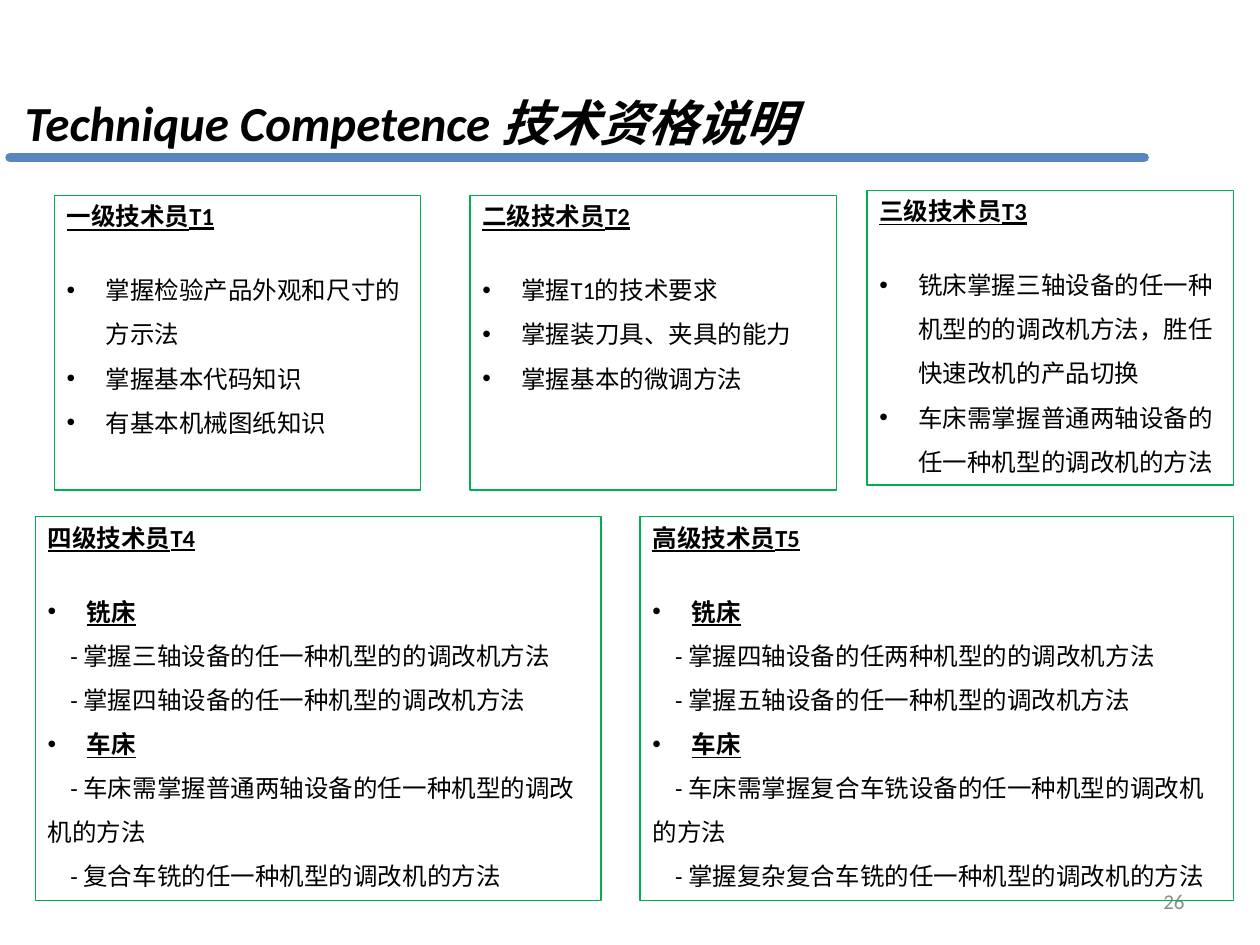
from dataclasses import dataclass

from lxml import etree
from pptx import Presentation
from pptx.dml.color import RGBColor
from pptx.enum.shapes import MSO_CONNECTOR, MSO_SHAPE
from pptx.enum.text import MSO_ANCHOR, MSO_AUTO_SIZE, PP_ALIGN
from pptx.oxml.ns import qn
from pptx.util import Inches, Pt

RECT = MSO_SHAPE.RECTANGLE
STRAIGHT = MSO_CONNECTOR.STRAIGHT
TOP, MIDDLE, BOTTOM = MSO_ANCHOR.TOP, MSO_ANCHOR.MIDDLE, MSO_ANCHOR.BOTTOM
LEFT, RIGHT = PP_ALIGN.LEFT, PP_ALIGN.RIGHT
GROW = MSO_AUTO_SIZE.SHAPE_TO_FIT_TEXT

FONT = "Calibri"
COLORS = {"text": "000000", "rule": "5887C0", "frame": "00B050", "page": "8C8C8C"}
HANG = 0.31  # bullet hanging indent
DASH = 0.18  # first-line indent of dash items


@dataclass
class Item:
    text: str
    kind: str = "bullet"  # bullet, group or dash


@dataclass
class Card:
    head: str
    left: float
    top: float
    width: float
    height: float
    items: list[Item]


def color(name: str) -> RGBColor:
    return RGBColor.from_string(COLORS[name])


def add_run(para, text: str, size: float, tone: str = "text", bold: bool = False,
            italic: bool = False, under: bool = False) -> None:
    run = para.add_run()
    run.text = text
    font = run.font
    font.name, font.size = FONT, Pt(size)
    font.bold, font.italic, font.underline = bold, italic, under
    font.color.rgb = color(tone)


def indent(para, left: float, first: float) -> None:
    props = para._p.get_or_add_pPr()
    props.set("marL", str(Inches(left)))
    props.set("indent", str(Inches(first)))


def add_bullet(para) -> None:
    props = para._p.get_or_add_pPr()
    etree.SubElement(props, qn("a:buFont")).set("typeface", "Arial")
    etree.SubElement(props, qn("a:buChar")).set("char", "•")


def add_label(slide, left: float, top: float, width: float, height: float, anchor):
    box = slide.shapes.add_textbox(Inches(left), Inches(top), Inches(width), Inches(height))
    frame = box.text_frame
    frame.word_wrap = True
    frame.vertical_anchor = anchor
    return frame.paragraphs[0]


def add_rule(slide) -> None:
    rule = slide.shapes.add_connector(STRAIGHT, Inches(0.08), Inches(1.25),
                                      Inches(9.08), Inches(1.25))
    rule.line.color.rgb = color("rule")
    rule.line.width = Pt(5.5)
    rule.line._get_or_add_ln().set("cap", "rnd")
    etree.SubElement(rule._element.spPr, qn("a:effectLst"))


def add_card(slide, card: Card) -> None:
    box = slide.shapes.add_shape(RECT, Inches(card.left), Inches(card.top),
                                 Inches(card.width), Inches(card.height))
    box.shadow.inherit = False
    box.fill.background()
    box.line.color.rgb = color("frame")
    box.line.width = Pt(0.75)
    frame = box.text_frame
    frame.word_wrap = True
    frame.auto_size = GROW
    frame.vertical_anchor = TOP

    head = frame.paragraphs[0]
    head.alignment = LEFT
    head.space_after = Pt(17)
    add_run(head, card.head, 14, bold=True, under=True)

    for item in card.items:
        para = frame.add_paragraph()
        para.alignment = LEFT
        para.line_spacing = 1.5
        if item.kind == "dash":
            indent(para, 0, DASH)
            add_run(para, "- " + item.text, 14)
        else:
            group = item.kind == "group"
            indent(para, HANG, -HANG)
            add_bullet(para)
            add_run(para, item.text, 14, bold=group, under=group)


def bullets(*texts: str) -> list[Item]:
    return [Item(text) for text in texts]


def groups(mill: list[str], lathe: list[str]) -> list[Item]:
    items = []
    for name, texts in (("铣床", mill), ("车床", lathe)):
        items.append(Item(name, "group"))
        items += [Item(text, "dash") for text in texts]
    return items


CARDS = [
    Card("一级技术员T1", 0.43, 1.55, 2.91, 2.34, bullets(
        "掌握检验产品外观和尺寸的方示法", "掌握基本代码知识", "有基本机械图纸知识")),
    Card("二级技术员T2", 3.73, 1.55, 2.91, 2.34, bullets(
        "掌握T1的技术要求", "掌握装刀具、夹具的能力", "掌握基本的微调方法")),
    Card("三级技术员T3", 6.88, 1.51, 2.91, 2.34, bullets(
        "铣床掌握三轴设备的任一种机型的的调改机方法，胜任快速改机的产品切换",
        "车床需掌握普通两轴设备的任一种机型的调改机的方法")),
    Card("四级技术员T4", 0.28, 4.1, 4.49, 3.05, groups(
        ["掌握三轴设备的任一种机型的的调改机方法", "掌握四轴设备的任一种机型的调改机方法"],
        ["车床需掌握普通两轴设备的任一种机型的调改机的方法",
         "复合车铣的任一种机型的调改机的方法"])),
    Card("高级技术员T5", 5.08, 4.1, 4.71, 3.05, groups(
        ["掌握四轴设备的任两种机型的的调改机方法", "掌握五轴设备的任一种机型的调改机方法"],
        ["车床需掌握复合车铣设备的任一种机型的调改机的方法",
         "掌握复杂复合车铣的任一种机型的调改机的方法"])),
]


def main() -> None:
    deck = Presentation()
    deck.slide_width, deck.slide_height = Inches(10), Inches(7.5)
    slide = deck.slides.add_slide(deck.slide_layouts[6])

    # Title and rule
    add_rule(slide)
    title = add_label(slide, 0, 0, 7.5, 1.25, BOTTOM)
    indent(title, 0.1, 0)
    add_run(title, "Technique Competence 技术资格说明", 28, bold=True, italic=True)

    # Page number
    page = add_label(slide, 7.17, 6.95, 2.33, 0.4, MIDDLE)
    page.alignment = RIGHT
    add_run(page, "26", 12, "page")

    # Grade cards
    for card in CARDS:
        add_card(slide, card)

    deck.save("out.pptx")


if __name__ == "__main__":
    main()
